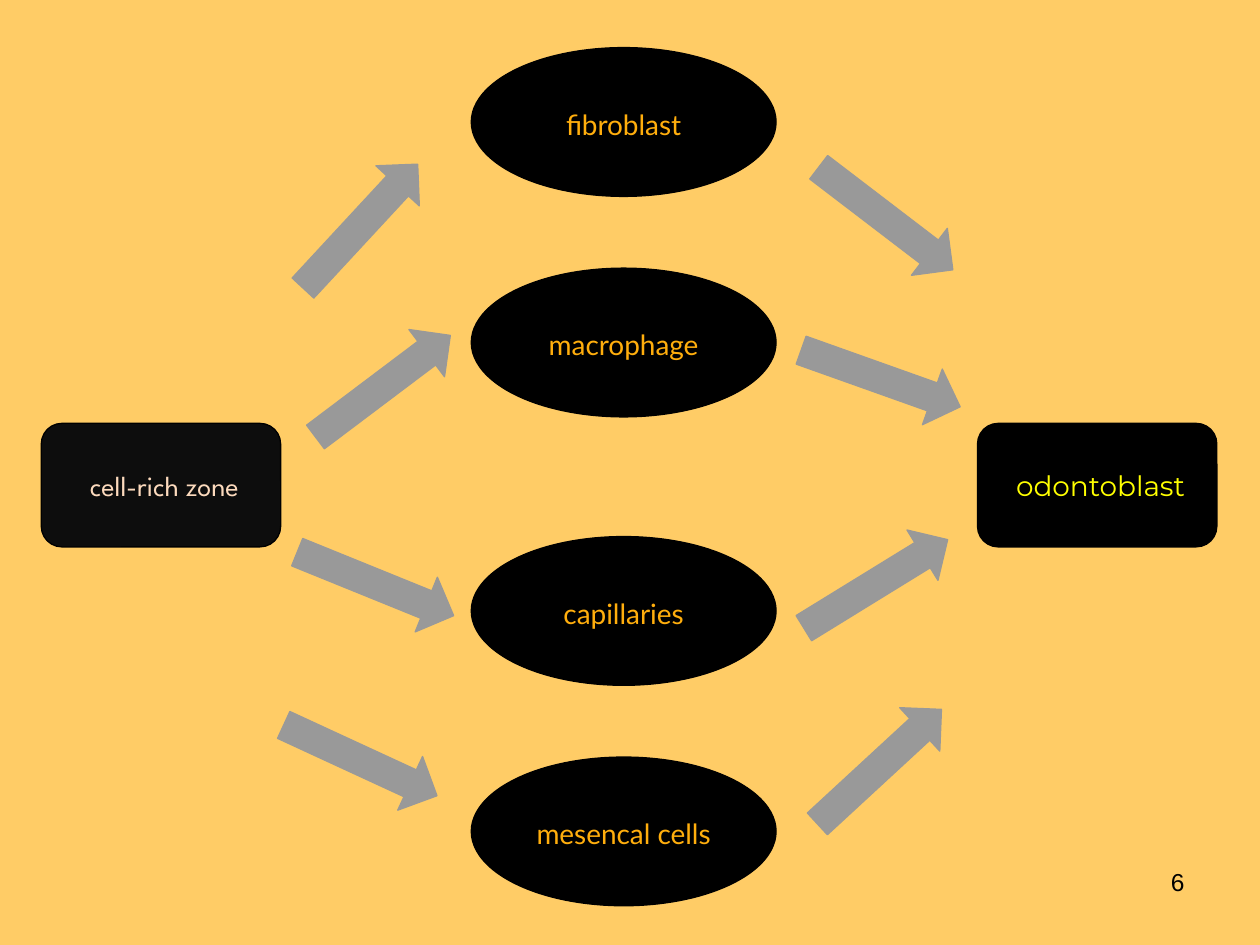
from pptx import Presentation
from pptx.dml.color import RGBColor
from pptx.enum.shapes import MSO_SHAPE
from pptx.enum.text import MSO_ANCHOR, PP_ALIGN
from pptx.util import Pt

COLORS = {
    "background": "FFCC66", "black": "000000", "charcoal": "0D0D0D",
    "arrow": "999999", "orange": "FFAE0D", "peach": "FCDABD", "yellow": "FFFF00",
}
CELLS = [("fibroblast", 27.2), ("macrophage", 153.2),
         ("capillaries", 306.6), ("mesencal cells", 432.6)]
ZONES = [("cell-rich zone", 23.6, "charcoal", "League Spartan", "peach"),
         ("odontoblast", 558.6, "black", "Montserrat", "yellow")]
ARROWS = [(157.7, 112.3, 312.8), (170.6, 203.8, 323), (166.3, 316.8, 22.1), (157.7, 417.6, 24.8),
          (457.9, 108, 37.4), (455, 199.4, 19.6), (452.2, 316.8, 328.4), (454.3, 421.2, 317.3)]


def rgb(name):
    """Return the named palette colour."""
    return RGBColor.from_string(COLORS[name])


def add_text(s, text, font, size, color, align=PP_ALIGN.CENTER, **frame):
    """Write one formatted run into a shape."""
    tf = s.text_frame
    for key, value in {"word_wrap": True, **frame}.items():
        setattr(tf, key, value)
    p = tf.paragraphs[0]
    p.alignment = align
    r = p.add_run()
    r.text = text
    for key, value in {"name": font, "size": Pt(size), "bold": False}.items():
        setattr(r.font, key, value)
    r.font.color.rgb = rgb(color)


def add_shape(slide, kind, box, fill, line):
    """Add a flat preset shape with a thin outline."""
    s = slide.shapes.add_shape(kind, *map(Pt, box))
    s.shadow.inherit = False
    s.fill.solid()
    s.fill.fore_color.rgb = rgb(fill)
    s.line.color.rgb = rgb(line)
    s.line.width = Pt(0.75)
    return s


def add_cell(slide, text, top):
    """Add one ellipse of the middle column."""
    s = add_shape(slide, MSO_SHAPE.OVAL, (269.3, top, 174.2, 85), "black", "black")
    add_text(s, text, "Lato", 16, "orange",
             vertical_anchor=MSO_ANCHOR.MIDDLE, margin_top=Pt(6))


def add_zone(slide, text, left, fill, font, color):
    """Add a rounded box at one end of the flow."""
    s = add_shape(slide, MSO_SHAPE.ROUNDED_RECTANGLE, (left, 241.9, 136.8, 70.6), fill, "black")
    add_text(s, text, font, 16, color,
             vertical_anchor=MSO_ANCHOR.MIDDLE, margin_left=Pt(11))


def add_arrow(slide, left, top, angle):
    """Add a rotated block arrow."""
    s = add_shape(slide, MSO_SHAPE.RIGHT_ARROW, (left, top, 96.5, 33.8), "arrow", "arrow")
    s.rotation = angle


def add_page_number(slide, number):
    """Add the page number at the lower right."""
    s = slide.shapes.add_textbox(Pt(516.2), Pt(491.8), Pt(167.8), Pt(37.4))
    add_text(s, number, "Arial", 14, "black", PP_ALIGN.RIGHT)


def main():
    """Build and save the slide."""
    prs = Presentation()
    prs.slide_width, prs.slide_height = Pt(720), Pt(540)
    slide = prs.slides.add_slide(prs.slide_layouts[6])
    slide.background.fill.solid()
    slide.background.fill.fore_color.rgb = rgb("background")
    for cell in CELLS:
        add_cell(slide, *cell)
    for arrow in ARROWS:
        add_arrow(slide, *arrow)
    for zone in ZONES:
        add_zone(slide, *zone)
    add_page_number(slide, "6")
    prs.save("out.pptx")


if __name__ == "__main__":
    main()
